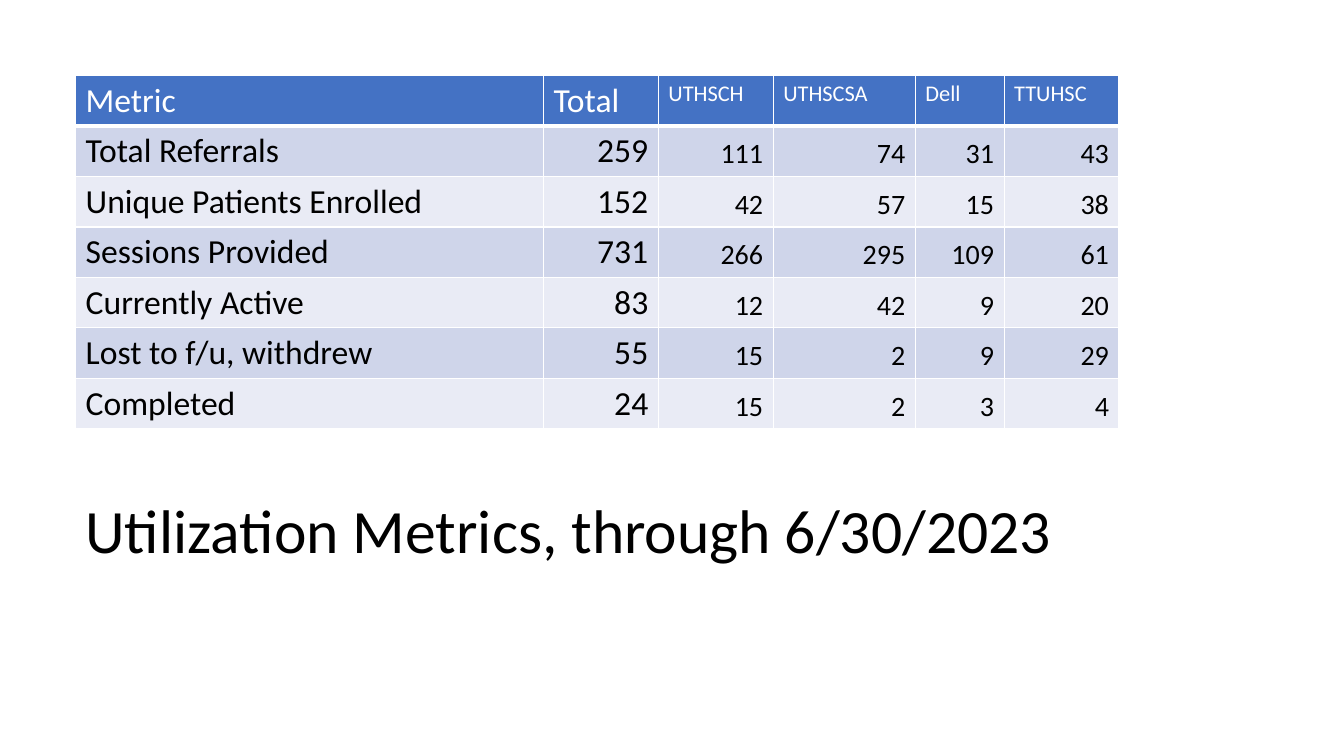
from dataclasses import dataclass

from lxml.etree import SubElement
from pptx import Presentation
from pptx.dml.color import RGBColor
from pptx.enum.text import MSO_ANCHOR, PP_ALIGN
from pptx.oxml.ns import qn
from pptx.slide import Slide
from pptx.table import _Cell
from pptx.text.text import _Paragraph
from pptx.util import Inches, Pt

FONT = "Calibri"
COLORS = {
    "header": "4472C4",
    "odd": "CFD5EA",
    "even": "E9EBF5",
    "white": "FFFFFF",
    "black": "000000",
}
GRID = Inches(0.25)
PAGE_COLUMNS, PAGE_ROWS = 53.32, 30
MARGIN = 3
ROW_HEIGHT = 2


@dataclass(frozen=True)
class Column:
    title: str
    width: float
    header_size: int = 16
    body_size: int = 20
    align: PP_ALIGN = PP_ALIGN.RIGHT
    anchor: MSO_ANCHOR = MSO_ANCHOR.BOTTOM


@dataclass(frozen=True)
class Metric:
    name: str
    total: int
    sites: tuple[int, ...]


COLUMNS = (
    Column("Metric", 18.56, 24, 24, PP_ALIGN.LEFT, MSO_ANCHOR.TOP),
    Column("Total", 4.56, 24, 24, anchor=MSO_ANCHOR.TOP),
    Column("UTHSCH", 4.56),
    Column("UTHSCSA", 5.64),
    Column("Dell", 3.52),
    Column("TTUHSC", 4.56),
)
METRICS = (
    Metric("Total Referrals", 259, (111, 74, 31, 43)),
    Metric("Unique Patients Enrolled", 152, (42, 57, 15, 38)),
    Metric("Sessions Provided", 731, (266, 295, 109, 61)),
    Metric("Currently Active", 83, (12, 42, 9, 20)),
    Metric("Lost to f/u, withdrew", 55, (15, 2, 9, 29)),
    Metric("Completed", 24, (15, 2, 3, 4)),
)


def grid(units: float) -> int:
    return round(units * GRID)


def write(para: _Paragraph, text: str, size: int, color: str) -> None:
    para.text = text
    font = para.font
    font.name, font.size, font.bold = FONT, Pt(size), False
    font.color.rgb = RGBColor.from_string(COLORS[color])


def add_borders(cell: _Cell, bottom: float) -> None:
    properties = cell._tc.get_or_add_tcPr()
    for side, width in (("L", 1), ("R", 1), ("T", 1), ("B", bottom)):
        line = SubElement(properties, qn(f"a:ln{side}"), w=str(Pt(width)))
        fill = SubElement(line, qn("a:solidFill"))
        SubElement(fill, qn("a:srgbClr"), val=COLORS["white"])


def fill_cell(cell: _Cell, text: str, column: Column, row: int) -> None:
    is_header = row == 0
    add_borders(cell, 3 if is_header else 1)
    background = "header" if is_header else "odd" if row % 2 else "even"
    cell.fill.solid()
    cell.fill.fore_color.rgb = RGBColor.from_string(COLORS[background])
    cell.vertical_anchor = MSO_ANCHOR.TOP if is_header else column.anchor
    para = cell.text_frame.paragraphs[0]
    para.alignment = PP_ALIGN.LEFT if is_header else column.align
    size = column.header_size if is_header else column.body_size
    write(para, text, size, "white" if is_header else "black")


def add_metrics_table(page: Slide) -> None:
    rows = [[column.title for column in COLUMNS]]
    rows += [[m.name, str(m.total), *map(str, m.sites)] for m in METRICS]
    width = sum(column.width for column in COLUMNS)
    table = page.shapes.add_table(
        len(rows), len(COLUMNS), grid(MARGIN), grid(MARGIN),
        grid(width), grid(ROW_HEIGHT * len(rows)),
    ).table
    table.horz_banding = False
    for index, column in enumerate(COLUMNS):
        table.columns[index].width = grid(column.width)
        for row, texts in enumerate(rows):
            fill_cell(table.cell(row, index), texts[index], column, row)


def add_title(page: Slide) -> None:
    box = page.shapes.add_textbox(
        grid(MARGIN), grid(19.64), grid(40.52), grid(6.6)
    )
    box.text_frame.word_wrap = True
    para = box.text_frame.paragraphs[0]
    para.line_spacing = 0.9
    write(para, "Utilization Metrics, through 6/30/2023", 44, "black")


def main() -> None:
    deck = Presentation()
    deck.slide_width = grid(PAGE_COLUMNS)
    deck.slide_height = grid(PAGE_ROWS)
    page = deck.slides.add_slide(deck.slide_layouts[6])
    add_title(page)
    add_metrics_table(page)
    deck.save("out.pptx")


if __name__ == "__main__":
    main()
